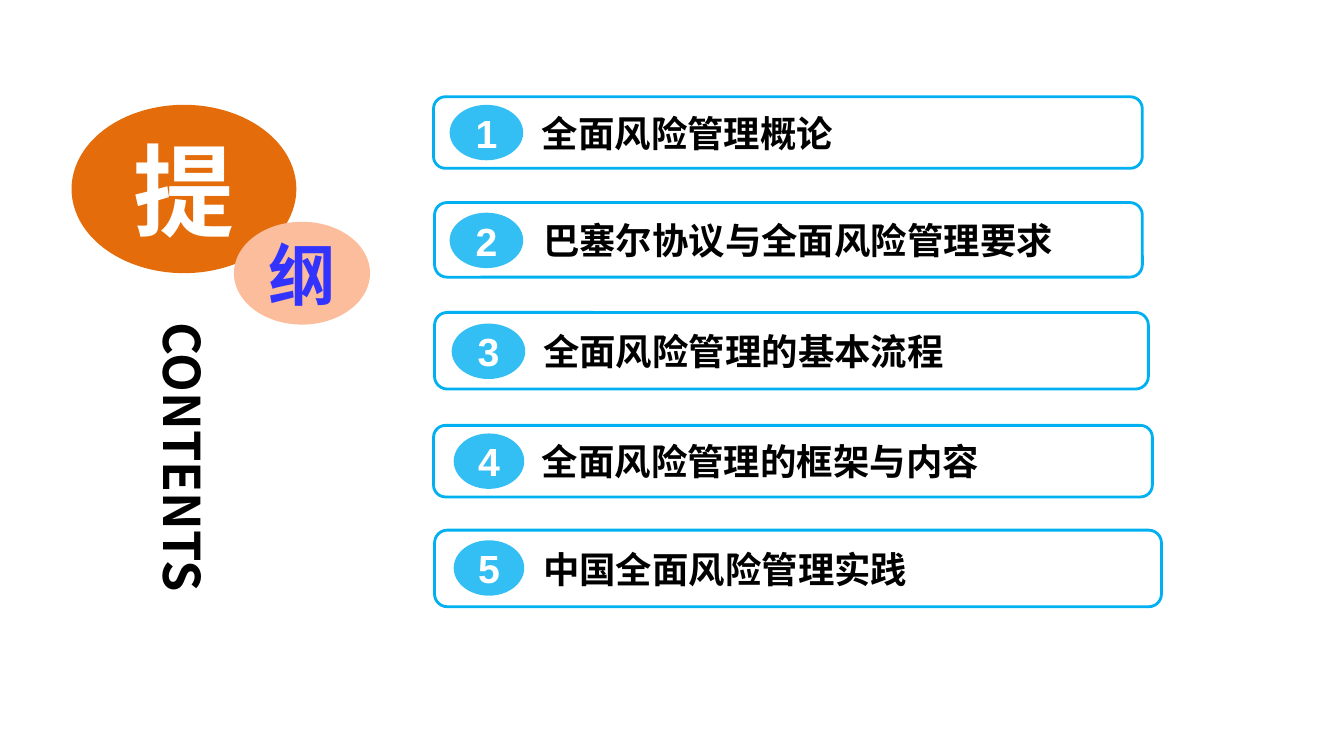
from dataclasses import dataclass
from typing import Any

from lxml import etree
from pptx import Presentation
from pptx.dml.color import RGBColor
from pptx.enum.shapes import MSO_SHAPE
from pptx.enum.text import MSO_ANCHOR, PP_ALIGN
from pptx.oxml.ns import qn
from pptx.util import Inches, Pt

OVAL = MSO_SHAPE.OVAL
ROUND = MSO_SHAPE.ROUNDED_RECTANGLE
MIDDLE = MSO_ANCHOR.MIDDLE
LEFT, CENTER = PP_ALIGN.LEFT, PP_ALIGN.CENTER

Box = tuple[float, float, float, float]


@dataclass(frozen=True)
class Theme:
    white: str = "FFFFFF"
    black: str = "000000"
    cyan: str = "00B0F0"
    orange: str = "E46C0A"
    peach: str = "FBBD9B"
    blue: str = "3333FF"
    han: str = "Noto Sans CJK SC"
    latin: str = "Arial"
    item: int = 26
    digit: int = 28
    side: int = 36
    small: int = 48
    large: int = 72


THEME = Theme()


@dataclass(frozen=True)
class Style:
    size: int
    color: str
    face: str = THEME.han
    align: Any = CENTER


@dataclass(frozen=True)
class Item:
    text: str
    card: Box
    dot: Box


@dataclass(frozen=True)
class Badge:
    text: str
    box: Box
    fill: str
    style: Style


ITEMS = [
    Item("全面风险管理概论", (4.3, 0.96, 7.03, 0.71), (4.46, 1.04, 0.73, 0.55)),
    Item("巴塞尔协议与全面风险管理要求", (4.31, 2.01, 7.02, 0.74), (4.46, 2.11, 0.73, 0.55)),
    Item("全面风险管理的基本流程", (4.31, 3.1, 7.08, 0.76), (4.48, 3.21, 0.73, 0.55)),
    Item("全面风险管理的框架与内容", (4.3, 4.22, 7.13, 0.71), (4.5, 4.3, 0.7, 0.55)),
    Item("中国全面风险管理实践", (4.31, 5.26, 7.21, 0.76), (4.5, 5.36, 0.7, 0.55)),
]
BADGES = [
    Badge("提", (0.71, 1.04, 2.23, 1.67), THEME.orange, Style(THEME.large, THEME.white)),
    Badge("纲", (2.32, 2.2, 1.35, 1.02), THEME.peach, Style(THEME.small, THEME.blue)),
]
CARD = Style(THEME.item, THEME.black, align=LEFT)
DIGIT = Style(THEME.digit, THEME.white, THEME.latin)
SIDE = Style(THEME.side, THEME.black, align=LEFT)
INDENT = Inches(1.04)


def apply(target: Any, values: dict[str, Any]) -> None:
    for name, value in values.items():
        setattr(target, name, value)


def write(shape: Any, text: str, style: Style, left: int = 0, wrap: bool = True) -> None:
    frame = shape.text_frame
    apply(frame, {"word_wrap": wrap, "vertical_anchor": MIDDLE, "margin_left": left,
                  "margin_right": 0, "margin_top": 0, "margin_bottom": 0})
    line = frame.paragraphs[0]
    line.alignment = style.align
    run = line.add_run()
    run.text = text
    apply(run.font, {"size": Pt(style.size), "bold": True, "name": style.face})
    run.font.color.rgb = RGBColor.from_string(style.color)
    latin = run.font._element.find(qn("a:latin"))
    east = etree.Element(qn("a:ea"), typeface=style.face)
    latin.addnext(east)


def draw(slide: Any, kind: Any, box: Box, fill: str, edge: str = "", alpha: int = 100) -> Any:
    """Add a flat shape; alpha is its opacity in percent."""
    shape = slide.shapes.add_shape(kind, *map(Inches, box))
    shape.shadow.inherit = False
    shape.fill.solid()
    shape.fill.fore_color.rgb = RGBColor.from_string(fill)
    if alpha < 100:
        color = shape._element.spPr.find(qn("a:solidFill"))[0]
        etree.SubElement(color, qn("a:alpha"), val=str(alpha * 1000))
    if edge:
        shape.line.color.rgb = RGBColor.from_string(edge)
        shape.line.width = Pt(2)
    else:
        shape.line.fill.background()
    return shape


def main() -> None:
    deck = Presentation()
    apply(deck, {"slide_width": Inches(13.33), "slide_height": Inches(7.5)})
    slide = deck.slides.add_slide(deck.slide_layouts[6])

    for count, item in enumerate(ITEMS, 1):
        card = draw(slide, ROUND, item.card, THEME.white, THEME.cyan)
        write(card, item.text, CARD, INDENT)
        dot = draw(slide, OVAL, item.dot, THEME.cyan, alpha=80)
        write(dot, str(count), DIGIT, wrap=False)

    for badge in BADGES:
        write(draw(slide, OVAL, badge.box, badge.fill), badge.text, badge.style)

    side = slide.shapes.add_textbox(*map(Inches, (1.38, 3.2, 0.89, 3)))
    write(side, "CONTENTS", SIDE)
    side.text_frame._txBody.bodyPr.set("vert", "eaVert")

    deck.save("out.pptx")


if __name__ == "__main__":
    main()
